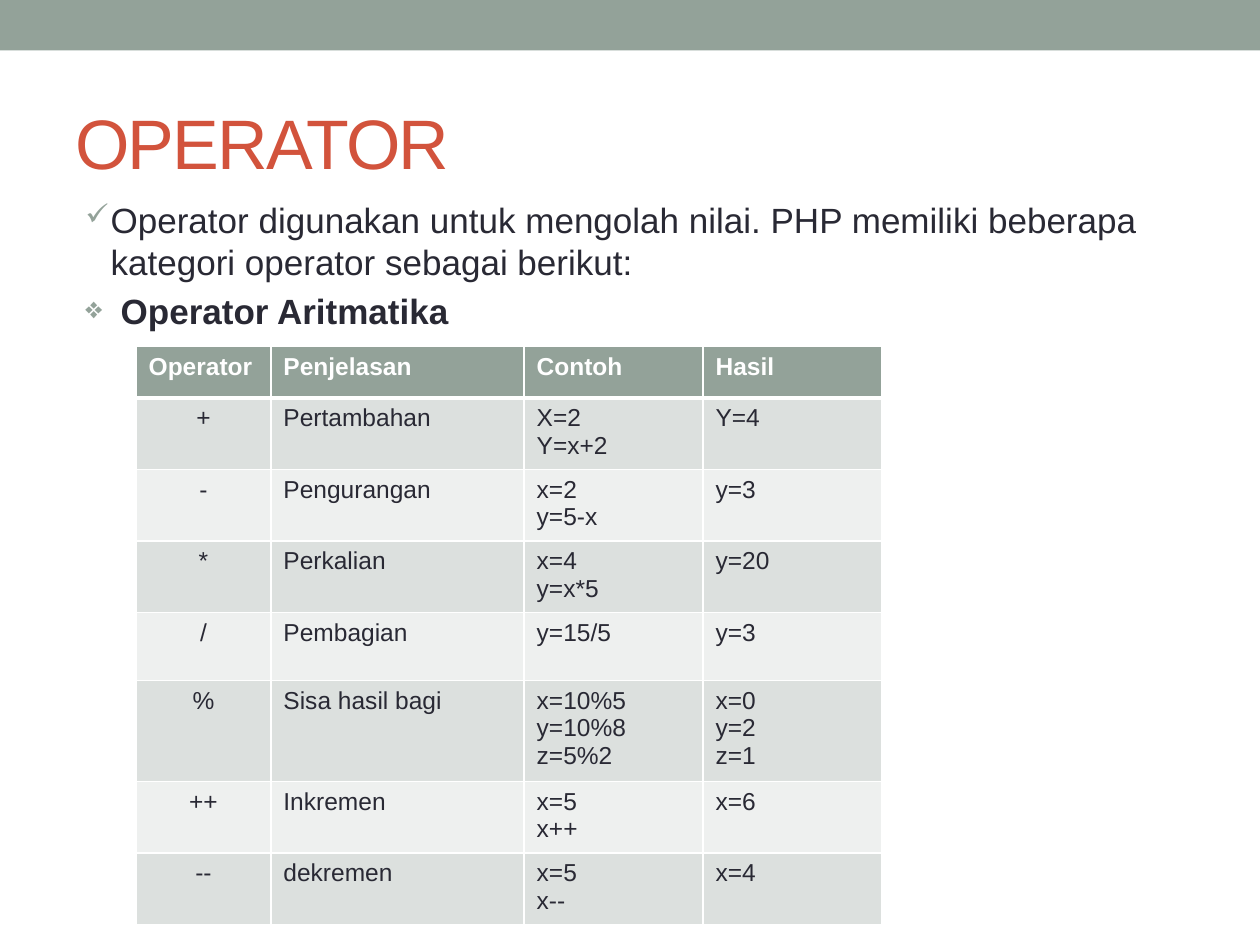
from lxml import etree
from pptx import Presentation, util as u
from pptx.dml.color import RGBColor
from pptx.enum import shapes, text
from pptx.oxml.ns import qn

WIDE, HIGH = 10, 7.5
SAGE, RED, INK, WHITE = "93A299", "D2533C", "292934", "FFFFFF"
BANDS = ("DCE0DE", "EEF0EF")
COLS = (1.07, 2.01, 1.42, 1.42)
HEAD = ("Operator", "Penjelasan", "Contoh", "Hasil")
ROWS = (
    ("+", "Pertambahan", "X=2\nY=x+2", "Y=4"),
    ("-", "Pengurangan", "x=2\ny=5‐x", "y=3"),
    ("*", "Perkalian", "x=4\ny=x*5", "y=20"),
    ("/", "Pembagian", "y=15/5", "y=3"),
    ("%", "Sisa hasil bagi", "x=10%5\ny=10%8\nz=5%2", "x=0\ny=2\nz=1"),
    ("++", "Inkremen", "x=5\nx++", "x=6"),
    ("--", "dekremen", "x=5\nx‐‐", "x=4"),
)


def paint(fmt, tone):
    """Set a solid colour on a fill."""
    fmt.solid()
    fmt.fore_color.rgb = RGBColor.from_string(tone)


def node(up, tag, **attrs):
    return etree.SubElement(up, qn(tag), attrs)


def mark(par, char, indent):
    """Give a paragraph a hanging bullet."""
    props = par._p.get_or_add_pPr()
    size = u.Inches(indent)
    props.set("marL", str(size))
    props.set("indent", str(-size))
    node(node(props, "a:buClr"), "a:srgbClr", val=SAGE)
    node(props, "a:buSzPct", val="85000")
    node(props, "a:buChar", char=char)


def write(frame, words, size=14, tone=INK, bold=False, align=None, more=False,
          before=None, bullet=None, indent=0, track=None):
    """Write each line of words as a paragraph; more adds to what is there."""
    for i, line in enumerate(words.split("\n")):
        par = frame.add_paragraph() if more or i else frame.paragraphs[0]
        if align is not None:
            par.alignment = align
        if before is not None:
            par.space_before = u.Pt(before)
        if bullet:
            mark(par, bullet, indent)
        run = par.add_run()
        run.text = line
        run.font.name, run.font.size, run.font.bold = "Arial", u.Pt(size), bold
        paint(run.font.fill, tone)
        if track:
            run.font._element.set("spc", str(track * 100))


def box(slide, left, top, width, height, anchor=text.MSO_ANCHOR.TOP):
    area = slide.shapes.add_textbox(*map(u.Inches, (left, top, width, height)))
    frame = area.text_frame
    frame.word_wrap = True
    frame.vertical_anchor = anchor
    return frame


def bar(slide):
    strip = slide.shapes.add_shape(shapes.MSO_SHAPE.RECTANGLE, 0, 0,
                                   u.Inches(WIDE), u.Inches(0.4))
    strip.shadow.inherit = False
    paint(strip.fill, SAGE)
    strip.line.fill.background()


def edge(cell, base):
    """Draw white borders, with the lower one base points wide."""
    props = cell._tc.get_or_add_tcPr()
    for i, (side, wide) in enumerate(zip("LRTB", (1, 1, 1, base))):
        line = etree.Element(qn("a:ln" + side), w=str(u.Pt(wide)))
        node(node(line, "a:solidFill"), "a:srgbClr", val=WHITE)
        props.insert(i, line)


def grid(slide, left, top):
    data = (HEAD,) + ROWS
    # Body rows hold at least two lines
    tall = [0.41] + [0.1 + 0.22 * max(2, row[2].count("\n") + 1) for row in ROWS]
    size = map(u.Inches, (left, top, sum(COLS), sum(tall)))
    table = slide.shapes.add_table(len(data), len(COLS), *size).table
    for col, wide in zip(table.columns, COLS):
        col.width = u.Inches(wide)
    for r, row in enumerate(data):
        table.rows[r].height = u.Inches(tall[r])
        for c, words in enumerate(row):
            cell = table.cell(r, c)
            paint(cell.fill, BANDS[(r - 1) % 2] if r else SAGE)
            edge(cell, 1 if r else 3)
            write(cell.text_frame, words, tone=INK if r else WHITE, bold=not r,
                  align=text.PP_ALIGN.CENTER if r and not c else None)


def main():
    deck = Presentation()
    deck.slide_width, deck.slide_height = u.Inches(WIDE), u.Inches(HIGH)
    slide = deck.slides.add_slide(deck.slide_layouts[6])

    # Top bar and title
    bar(slide)
    title = box(slide, 0.5, 0.58, 0.9 * WIDE, 1.08, text.MSO_ANCHOR.MIDDLE)
    write(title, "OPERATOR", size=40, tone=RED, track=-1)

    # Introduction
    body = box(slide, 0.58, 1.53, 0.9 * WIDE, 1.3)
    write(body, "Operator digunakan untuk mengolah nilai. PHP memiliki beberapa "
          "kategori operator sebagai berikut:", size=20, bullet="✓", indent=0.2)
    write(body, "Operator Aritmatika", size=20, bold=True, more=True, before=4,
          bullet="❖", indent=0.28)

    # Operator table
    grid(slide, 1.08, 2.75)
    deck.save("out.pptx")


if __name__ == "__main__":
    main()
